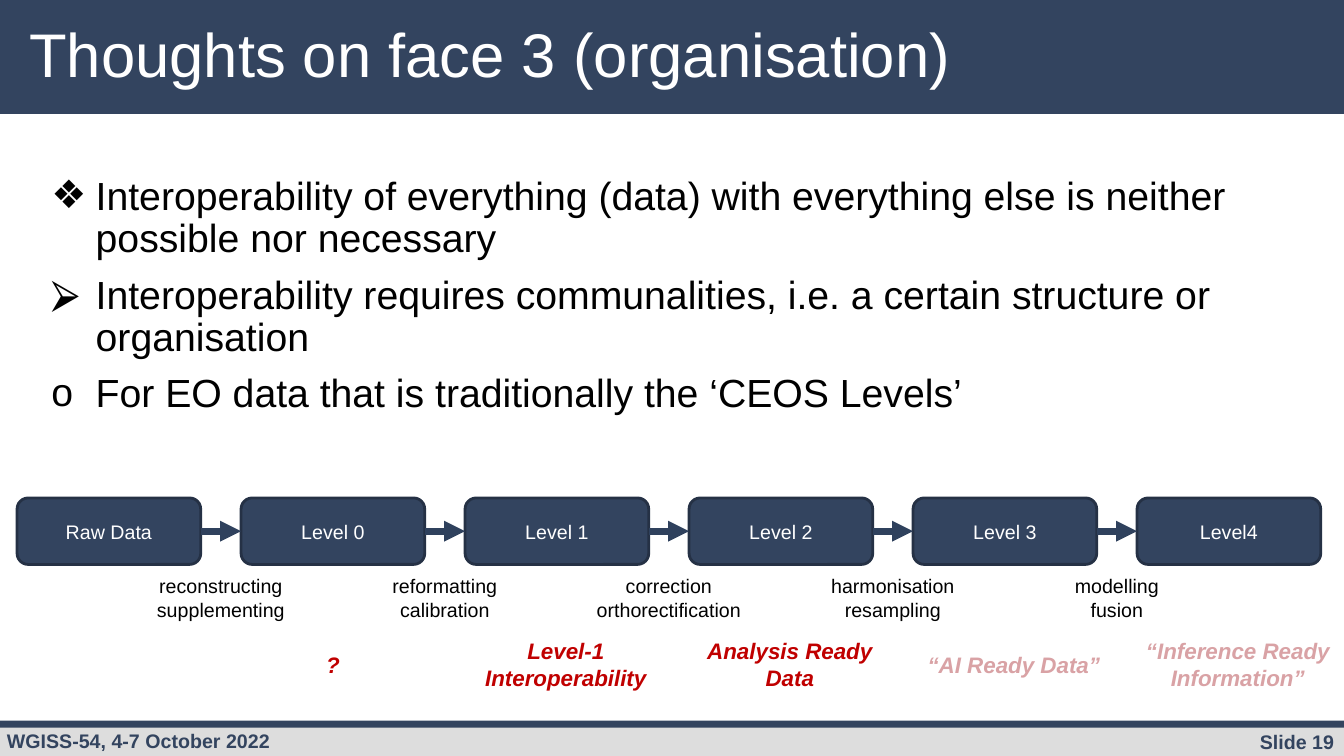
import pptx
import pptx.dml.color
import pptx.enum.shapes
import pptx.enum.text
import pptx.oxml
import pptx.oxml.ns
import pptx.util
from lxml import etree

RGBColor = pptx.dml.color.RGBColor
NAVY = RGBColor(0x33, 0x44, 0x5F)
DARK_NAVY = RGBColor(0x25, 0x31, 0x45)
ARROW_BLUE = RGBColor(0x2F, 0x41, 0x5D)
LIGHT_GREY = RGBColor(0xDD, 0xDD, 0xDD)
WHITE = RGBColor(0xFF, 0xFF, 0xFF)
BLACK = RGBColor(0, 0, 0)
RED = RGBColor(0xC0, 0, 0)
PALE_RED = RGBColor(0xD9, 0xA2, 0xA5)

WIDTH = pptx.util.Inches(13.33)
HEIGHT = pptx.util.Inches(7.5)
COLUMN = WIDTH / 6
ROW = pptx.util.Inches(0.66)
FIRST_CENTRE = pptx.util.Inches(1.08)
CHAIN_TOP = pptx.util.Inches(4.94)
LEVEL_SHARE = 0.82

SHAPES = pptx.enum.shapes.MSO_SHAPE
ALIGN = pptx.enum.text.PP_ALIGN
ANCHOR = pptx.enum.text.MSO_ANCHOR

POINTS = [
    ("❖", "Interoperability of everything (data) with everything else is neither possible nor necessary"),
    ("⮚", "Interoperability requires communalities, i.e. a certain structure or organisation"),
    ("o", "For EO data that is traditionally the ‘CEOS Levels’"),
]
LEVELS = ["Raw Data", "Level 0", "Level 1", "Level 2", "Level 3", "Level4"]
STEPS = [
    "reconstructing\nsupplementing",
    "reformatting\vcalibration",
    "correction\northorectification",
    "harmonisation\vresampling",
    "modelling\nfusion",
]
OUTCOMES = [
    (1, "?", RED),
    (2.04, "Level-1\nInteroperability", RED),
    (3.04, "Analysis Ready Data", RED),
    (4.04, "“AI Ready Data”", PALE_RED),
    (5.04, "“Inference Ready Information”", PALE_RED),
]


def percent(left, top, width, height):
    return (int(WIDTH * left / 100), int(HEIGHT * top / 100),
            int(WIDTH * width / 100), int(HEIGHT * height / 100))


def cell(column, row, share=1):
    width = COLUMN * share
    left = FIRST_CENTRE + column * COLUMN - width / 2
    return int(left), int(CHAIN_TOP + row * ROW), int(width), int(ROW)


def move(shape, area):
    shape.left, shape.top, shape.width, shape.height = area


def format_paragraph(paragraph, size, color, align=ALIGN.LEFT, bold=False, italic=False):
    paragraph.alignment = align
    font = paragraph.font
    font.name = "Arial"
    font.size = pptx.util.Pt(size)
    font.color.rgb = color
    font.bold = bold
    font.italic = italic


def add_band(slide, area, color):
    band = slide.shapes.add_shape(SHAPES.RECTANGLE, *area)
    band.shadow.inherit = False
    band.fill.solid()
    band.fill.fore_color.rgb = color
    band.line.fill.background()
    slide.shapes.title.element.addprevious(band.element)


def add_footer_text(slide, area, text, align):
    text_box = slide.shapes.add_textbox(*area)
    text_box.text_frame.word_wrap = True
    text_box.text_frame.text = text
    format_paragraph(text_box.text_frame.paragraphs[0], 14, NAVY, align, bold=True)


def add_rounded_box(slide, area, text, size, color, fill=None, emphasis=False):
    shape = slide.shapes.add_shape(SHAPES.ROUNDED_RECTANGLE, *area)
    shape.shadow.inherit = False
    if fill is None:
        shape.fill.background()
        shape.line.fill.background()
    else:
        shape.fill.solid()
        shape.fill.fore_color.rgb = fill
        shape.line.color.rgb = DARK_NAVY
        shape.line.width = pptx.util.Pt(2)
    shape.text_frame.word_wrap = True
    shape.text_frame.vertical_anchor = ANCHOR.MIDDLE
    shape.text_frame.text = text
    for paragraph in shape.text_frame.paragraphs:
        format_paragraph(paragraph, size, color, ALIGN.CENTER, emphasis, emphasis)
    return shape


def add_arrow(slide, source, target):
    arrow = slide.shapes.add_connector(pptx.enum.shapes.MSO_CONNECTOR.STRAIGHT, 0, 0, 0, 0)
    arrow.begin_connect(source, 3)
    arrow.end_connect(target, 1)
    arrow.line.color.rgb = ARROW_BLUE
    arrow.line.width = pptx.util.Pt(5)
    qn = pptx.oxml.ns.qn
    etree.SubElement(arrow.line._get_or_add_ln(), qn("a:tailEnd"), type="triangle")
    etree.SubElement(arrow.element.spPr, qn("a:effectLst"))


def add_bullet(paragraph, character):
    qn = pptx.oxml.ns.qn
    properties = paragraph._p.get_or_add_pPr()
    properties.set("marL", str(pptx.util.Inches(0.5)))
    properties.set("indent", str(pptx.util.Inches(-0.44)))
    bullet_color = etree.SubElement(properties, qn("a:buClr"))
    etree.SubElement(bullet_color, qn("a:srgbClr"), val=str(BLACK))
    etree.SubElement(properties, qn("a:buFont"), typeface="Arial")
    etree.SubElement(properties, qn("a:buChar"), char=character)


def fill_title(title):
    move(title, percent(1.42, 2.53, 77.04, 11.33))
    frame = title.text_frame
    frame.text = "Thoughts on face 3 (organisation)"
    frame.vertical_anchor = ANCHOR.TOP
    frame.auto_size = pptx.enum.text.MSO_AUTO_SIZE.NONE
    frame.paragraphs[0].line_spacing = 0.9
    format_paragraph(frame.paragraphs[0], 44, WHITE)


def fill_body(body):
    move(body, percent(2.62, 22.67, 94.3, 36.93))
    frame = body.text_frame
    frame.text = "\n".join(text for _, text in POINTS)
    frame.vertical_anchor = ANCHOR.TOP
    frame.auto_size = pptx.enum.text.MSO_AUTO_SIZE.NONE
    for index, (paragraph, (character, _)) in enumerate(zip(frame.paragraphs, POINTS)):
        add_bullet(paragraph, character)
        paragraph.line_spacing = 0.9
        paragraph.space_before = pptx.util.Pt(10 if index else 0)
        format_paragraph(paragraph, 28, BLACK)


def main():
    presentation = pptx.Presentation()
    presentation.slide_width = WIDTH
    presentation.slide_height = HEIGHT
    slide = presentation.slides.add_slide(presentation.slide_layouts[1])

    add_band(slide, percent(0, 0, 100, 15.07), NAVY)
    add_band(slide, percent(0, 95.87, 100, 4.13), LIGHT_GREY)
    add_band(slide, percent(0, 95.33, 100, 0.93), NAVY)
    fill_title(slide.shapes.title)
    fill_body(slide.placeholders[1])
    add_footer_text(slide, percent(84.23, 95.87, 15.77, 4.13), "Slide 19", ALIGN.RIGHT)
    add_footer_text(slide, percent(-0.23, 95.73, 40.43, 4.27), "WGISS-54, 4-7 October 2022", ALIGN.LEFT)

    for index, step in enumerate(STEPS):
        add_rounded_box(slide, cell(index + 0.5, 1, LEVEL_SHARE), step, 14, BLACK)
    levels = [
        add_rounded_box(slide, cell(index, 0, LEVEL_SHARE), level, 14, WHITE, NAVY)
        for index, level in enumerate(LEVELS)
    ]
    for source, target in zip(levels, levels[1:]):
        add_arrow(slide, source, target)
    for column, outcome, color in OUTCOMES:
        add_rounded_box(slide, cell(column, 2), outcome, 16, color, emphasis=True)

    presentation.save("out.pptx")


if __name__ == "__main__":
    main()
